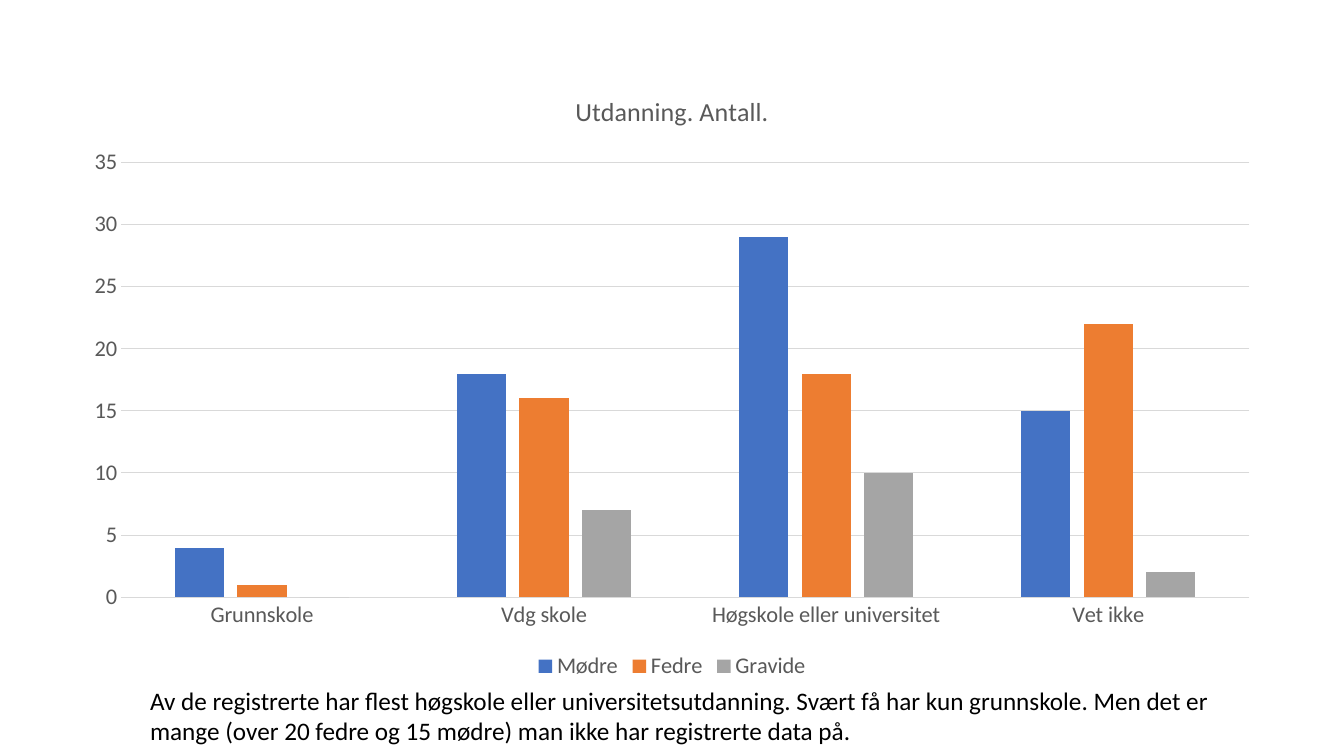
from typing import NamedTuple

from pptx import Presentation
from pptx import util as u
from pptx.chart.data import CategoryChartData
from pptx.dml.color import RGBColor
from pptx.enum import chart as ch

FONT = "Calibri"
GREY = "595959"
RULE = "D9D9D9"


class Group(NamedTuple):
    name: str
    vals: tuple[int, ...]
    color: str


LEVELS = ("Grunnskole", "Vdg skole", "Høgskole eller universitet", "Vet ikke")
GROUPS = (
    Group("Mødre", (4, 18, 29, 15), "4472C4"),
    Group("Fedre", (1, 16, 18, 22), "ED7D31"),
    Group("Gravide", (0, 7, 10, 2), "A5A5A5"),
)
NOTE = (
    "Av de registrerte har flest høgskole eller universitetsutdanning. "
    "Svært få har kun grunnskole. Men det er mange (over 20 fedre og 15 mødre) "
    "man ikke har registrerte data på."
)


def rgb(code: str) -> RGBColor:
    return RGBColor.from_string(code)


def style(font, size: float, color: str) -> None:
    font.name = FONT
    font.size = u.Pt(size)
    font.bold = False
    font.color.rgb = rgb(color)


def rule(line) -> None:
    line.color.rgb = rgb(RULE)
    line.width = u.Pt(0.75)


def add_bars(slide) -> None:
    data = CategoryChartData()
    data.categories = LEVELS
    for group in GROUPS:
        data.add_series(group.name, group.vals)
    chart = slide.shapes.add_chart(
        ch.XL_CHART_TYPE.COLUMN_CLUSTERED,
        u.Inches(0.7), u.Inches(0.7), u.Inches(11.93), u.Inches(6.09), data,
    ).chart
    style(chart.font, 16, "000000")

    # Title and legend
    chart.has_title = True
    title = chart.chart_title
    title.include_in_layout = False
    par = title.text_frame.paragraphs[0]
    par.text = "Utdanning. Antall."
    style(par.runs[0].font, 18.6, GREY)
    chart.has_legend = True
    chart.legend.position = ch.XL_LEGEND_POSITION.BOTTOM
    chart.legend.include_in_layout = False
    style(chart.legend.font, 16, GREY)

    # Axes
    for axis in (chart.category_axis, chart.value_axis):
        axis.major_tick_mark = ch.XL_TICK_MARK.NONE
        axis.minor_tick_mark = ch.XL_TICK_MARK.NONE
        style(axis.tick_labels.font, 16, GREY)
    rule(chart.category_axis.format.line)
    scale = chart.value_axis
    scale.minimum_scale, scale.maximum_scale, scale.major_unit = 0, 35, 5
    scale.format.line.fill.background()
    rule(scale.major_gridlines.format.line)

    # Bars
    plot = chart.plots[0]
    plot.gap_width, plot.overlap = 219, -27
    plot.vary_by_categories = False
    for bars, group in zip(plot.series, GROUPS):
        bars.format.fill.solid()
        bars.format.fill.fore_color.rgb = rgb(group.color)


def add_note(slide) -> None:
    box = slide.shapes.add_textbox(
        u.Inches(1.39), u.Inches(6.75), u.Inches(10.77), u.Inches(0.71)
    )
    frame = box.text_frame
    frame.word_wrap = True
    frame.text = NOTE
    style(frame.paragraphs[0].runs[0].font, 18, "000000")


def main() -> None:
    deck = Presentation()
    deck.slide_width, deck.slide_height = u.Inches(13.33), u.Inches(7.5)
    slide = deck.slides.add_slide(deck.slide_layouts[6])
    add_bars(slide)
    add_note(slide)
    deck.save("out.pptx")


if __name__ == "__main__":
    main()
